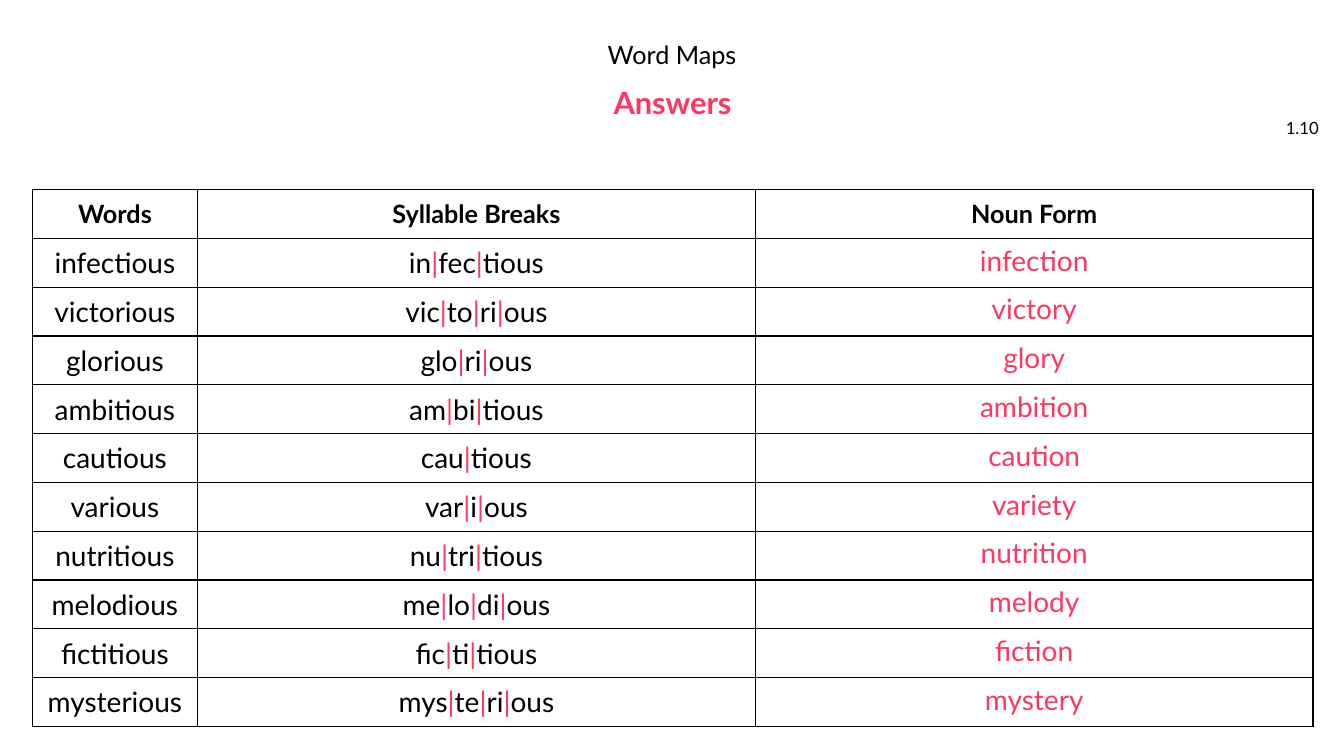
"""Build the Word Maps answer slide with its table of syllable breaks and nouns."""
from dataclasses import dataclass

from lxml.etree import SubElement
from pptx import Presentation
from pptx.dml.color import RGBColor as RGB
from pptx.enum.text import MSO_ANCHOR as ANCHOR, MSO_AUTO_SIZE as FIT, PP_ALIGN as ALIGN
from pptx.oxml.ns import qn
from pptx.util import Inches, Pt


@dataclass(frozen=True)
class Theme:
    font: str = "Lato"
    ink: str = "000000"
    answer: str = "FF3760"
    paper: str = "FFFFFF"
    number: int = 12
    heading: int = 18
    body: int = 20
    subtitle: int = 22
    border: int = 1


def write(tf, runs, size, bold=False, align=ALIGN.CENTER):
    p = tf.paragraphs[0]
    p.alignment = align
    p.font.name, p.font.size, p.font.bold = theme.font, Pt(size), bold
    for text, color in runs:
        r = p.add_run()
        r.text = text
        r.font.color.rgb = RGB.from_string(color)
    return p


def rule_cell(cell):
    tcPr = cell._tc.get_or_add_tcPr()
    for i, side in enumerate(("lnL", "lnR", "lnT", "lnB")):
        ln = tcPr.makeelement(qn(f"a:{side}"), {"w": str(Pt(theme.border))})
        fill = SubElement(ln, qn("a:solidFill"))
        SubElement(fill, qn("a:srgbClr"), val=theme.ink)
        tcPr.insert(i, ln)


theme = Theme()
headings = ("Words", "Syllable Breaks", "Noun Form")
entries = (
    ("in|fec|tious", "infection"),
    ("vic|to|ri|ous", "victory"),
    ("glo|ri|ous", "glory"),
    ("am|bi|tious", "ambition"),
    ("cau|tious", "caution"),
    ("var|i|ous", "variety"),
    ("nu|tri|tious", "nutrition"),
    ("me|lo|di|ous", "melody"),
    ("fic|ti|tious", "fiction"),
    ("mys|te|ri|ous", "mystery"),
)

prs = Presentation()
prs.slide_width, prs.slide_height = Inches(13.33), Inches(7.5)
col, row = prs.slide_width / 100, prs.slide_height / 100
s = prs.slides.add_slide(prs.slide_layouts[5])
s.background.fill.solid()
s.background.fill.fore_color.rgb = RGB.from_string(theme.paper)

title = s.shapes.title
subtitle, number = (s.shapes.add_textbox(0, 0, 0, 0) for _ in range(2))
labels = (
    (title, "Word Maps", (28.66, 4.93, 42.68, 4.67), ANCHOR.TOP,
     theme.heading, theme.ink, False, ALIGN.CENTER, 0.9),
    (subtitle, "Answers", (15.68, 11.2, 68.72, 5.33), ANCHOR.MIDDLE,
     theme.subtitle, theme.answer, True, ALIGN.CENTER, 0.9),
    (number, "1.10", (94.15, 14.27, 4.73, 5.33), ANCHOR.MIDDLE,
     theme.number, theme.ink, False, ALIGN.RIGHT, 1.0),
)
for sp, text, (x, y, w, h), anchor, size, color, bold, align, spacing in labels:
    sp.left, sp.top = round(x * col), round(y * row)
    sp.width, sp.height = round(w * col), round(h * row)
    tf = sp.text_frame
    tf.word_wrap, tf.auto_size, tf.vertical_anchor = True, FIT.NONE, anchor
    p = write(tf, [(text, color)], size, bold, align)
    p.line_spacing = spacing

widths = [round(share * col) for share in (12.3, 41.5, 41.5)]
row_height = round(6.46 * row)
row_count = len(entries) + 1
table = s.shapes.add_table(row_count, len(headings), round(2.4 * col), round(25.07 * row),
                           sum(widths), row_height * row_count).table
table.first_row = table.horz_banding = False
for column, width in zip(table.columns, widths):
    column.width = width

lines = [[[(heading, theme.ink)] for heading in headings]]
for breaks, noun in entries:
    first, *rest = breaks.split("|")
    syllables = [(first, theme.ink)]
    for syllable in rest:
        syllables += [("|", theme.answer), (syllable, theme.ink)]
    lines.append([[(breaks.replace("|", ""), theme.ink)], syllables, [(noun, theme.answer)]])

for i, line in enumerate(lines):
    table.rows[i].height = row_height
    for j, runs in enumerate(line):
        cell = table.cell(i, j)
        cell.fill.background()
        cell.vertical_anchor = ANCHOR.MIDDLE
        cell.margin_left = cell.margin_right = Inches(0.1)
        cell.margin_top = Inches(0 if i and j == 2 else 0.05)
        cell.margin_bottom = Inches(0.05)
        write(cell.text_frame, runs, theme.body if i else theme.heading, bold=not i)
        rule_cell(cell)

prs.save("out.pptx")
